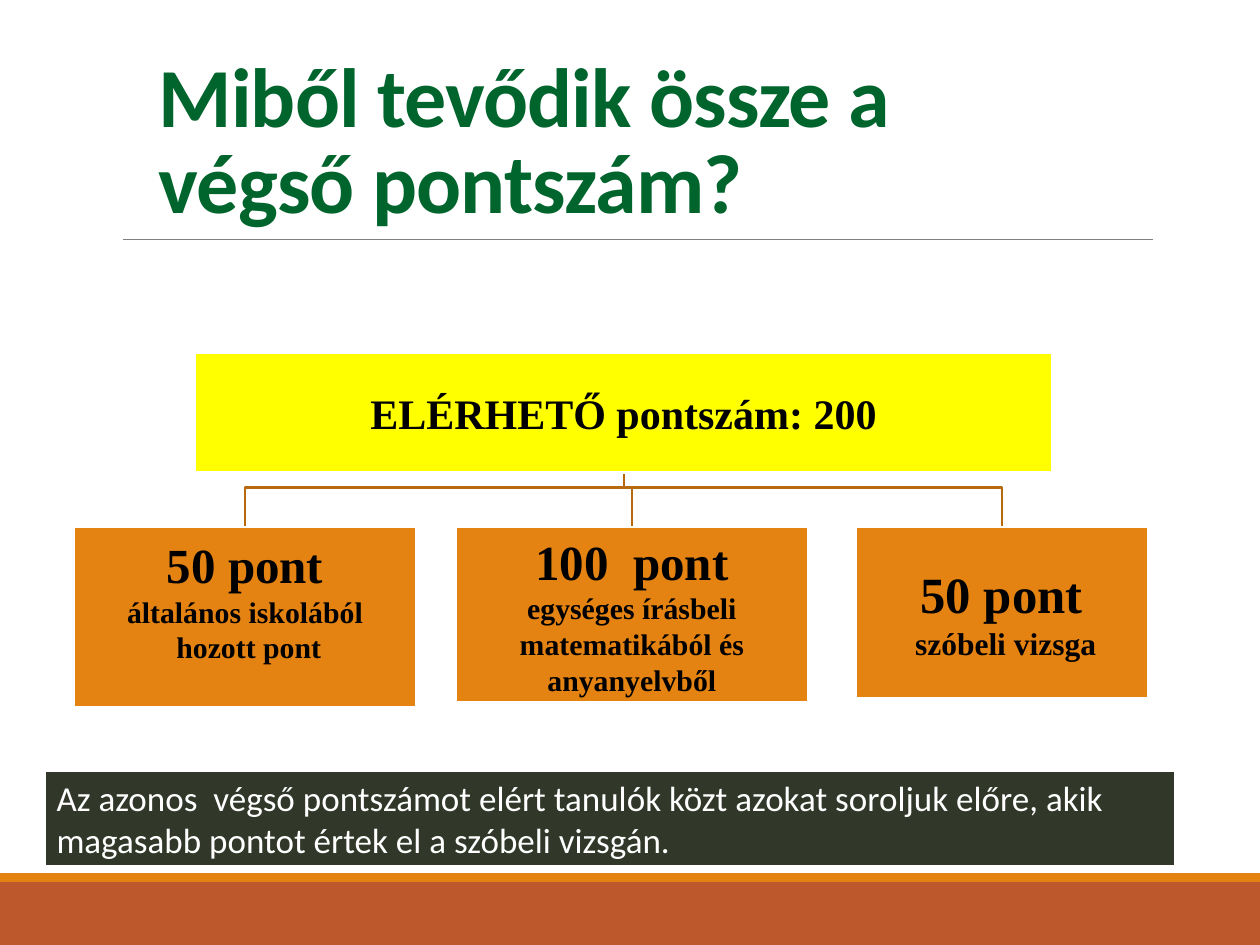
from pptx import Presentation
from pptx.dml.color import RGBColor as RGB
from pptx.enum.shapes import MSO_CONNECTOR as LINE, MSO_SHAPE as SHAPE
from pptx.enum.text import MSO_ANCHOR as ANCHOR, MSO_AUTO_SIZE as FIT, PP_ALIGN as ALIGN
from pptx.util import Inches, Pt
from lxml.etree import SubElement
from pptx.oxml.ns import qn

COLORS = {
    "title": "00642D", "rule": "808080", "branch": "B7690E", "total": "FFFF00",
    "part": "E48312", "footer": "BD582C", "note": "313829",
    "white": "FFFFFF", "black": "000000",
}
SERIF = "Times New Roman"

deck = Presentation()
deck.slide_width, deck.slide_height = Inches(10), Inches(7.5)
CELL = deck.slide_width / 100  # the page is a grid of 100 columns by 75 rows


def grid(*cells):
    return [round(cell * CELL) for cell in cells]


def add_box(place, fill, lines, outline=None, width=1.25, inset=0.2, extra_bottom=0, align=ALIGN.CENTER):
    """Add a rectangle; each line is (text, font values)."""
    box = page.shapes.add_shape(SHAPE.RECTANGLE, *grid(*place))
    box.shadow.inherit = False
    box.fill.solid()
    box.fill.fore_color.rgb = RGB.from_string(COLORS[fill])
    if outline:
        box.line.color.rgb = RGB.from_string(COLORS[outline])
        box.line.width = Pt(width)
    else:
        box.line.fill.background()
    frame = box.text_frame
    frame.word_wrap = True
    frame.vertical_anchor = ANCHOR.MIDDLE
    if inset is not None:
        margins = grid(inset, inset, inset, inset + extra_bottom)
        for side, margin in zip(("left", "right", "top", "bottom"), margins):
            setattr(frame, f"margin_{side}", margin)
    for number, (text, values) in enumerate(lines):
        para = frame.add_paragraph() if number else frame.paragraphs[0]
        para.alignment = align
        span = para.add_run()
        span.text = text
        for name, value in values.items():
            if name == "color":
                span.font.color.rgb = RGB.from_string(COLORS[value])
            else:
                setattr(span.font, name, value)
    return box


def serif(size):
    return {"name": SERIF, "size": Pt(size), "bold": True, "color": "black"}


page = deck.slides.add_slide(deck.slide_layouts[5])

# Footer bands and the rule under the title
add_box((0, 70, 100, 5), "footer", [])
add_box((0, 69.3, 100, 0.7), "part", [])
rule = page.shapes.add_connector(LINE.STRAIGHT, *grid(9.8, 19, 91.5, 19))
rule.line.color.rgb = RGB.from_string(COLORS["rule"])
rule.line.width = Pt(0.5)
SubElement(rule._element.spPr, qn("a:effectLst"))

# Title
title = page.shapes.title
title.left, title.top, title.width, title.height = grid(11.6, 0, 74.4, 26.5)
frame = title.text_frame
frame.word_wrap = True
frame.auto_size = FIT.NONE
frame.vertical_anchor = ANCHOR.BOTTOM
frame.margin_bottom = grid(8.2)[0]
para = frame.paragraphs[0]
para.alignment = ALIGN.LEFT
para.line_spacing = 0.85
span = para.add_run()
span.text = "Miből tevődik össze a végső pontszám?"
for name, value in {"name": "Calibri", "size": Pt(48), "bold": True}.items():
    setattr(span.font, name, value)
span.font.color.rgb = RGB.from_string(COLORS["title"])
span._r.get_or_add_rPr().set("spc", "-50")

# Branches from the total down to each part
ROOT, TOTAL_BOTTOM, BEND, PART_TOP = 49.5, 37.5, 38.7, 41.8
parts = [  # left, width, height, bottom inset, lines with sizes
    (5.9, 27.1, 14.3, 2.7, [("50 pont", 28), ("általános iskolából", 17), (" hozott pont", 17)]),
    (36.2, 27.9, 13.9, 0, [("100  pont", 28), ("egységes írásbeli", 17),
                           ("matematikából és anyanyelvből", 17)]),
    (67.9, 23.2, 13.6, 0, [("50 pont", 29), (" szóbeli vizsga", 18)]),
]
for left, width, *_ in parts:
    middle = left + width / 2
    pen = page.shapes.build_freeform(*grid(ROOT, TOTAL_BOTTOM))
    corners = [(ROOT, BEND), (middle, BEND), (middle, PART_TOP)]
    pen.add_line_segments([grid(*corner) for corner in corners], close=False)
    branch = pen.convert_to_shape()
    branch.shadow.inherit = False
    branch.fill.background()
    branch.line.color.rgb = RGB.from_string(COLORS["branch"])
    branch.line.width = Pt(1.25)

# Total and its parts
add_box((15.5, 28, 68, 9.5), "total", [("ELÉRHETŐ pontszám: 200", serif(24))], "white")
for left, width, height, extra, lines in parts:
    add_box((left, PART_TOP, width, height), "part",
            [(text, serif(size)) for text, size in lines], "white", extra_bottom=extra)

# Tie-break note
note = ("Az azonos  végső pontszámot elért tanulók közt azokat soroljuk előre, "
        "akik magasabb pontot értek el a szóbeli vizsgán.")
add_box((3.5, 61.1, 89.8, 7.7), "note",
        [(note, {"name": "Calibri", "size": Pt(20), "color": "white"})],
        "white", width=2, inset=None, align=ALIGN.LEFT)

deck.save("out.pptx")
